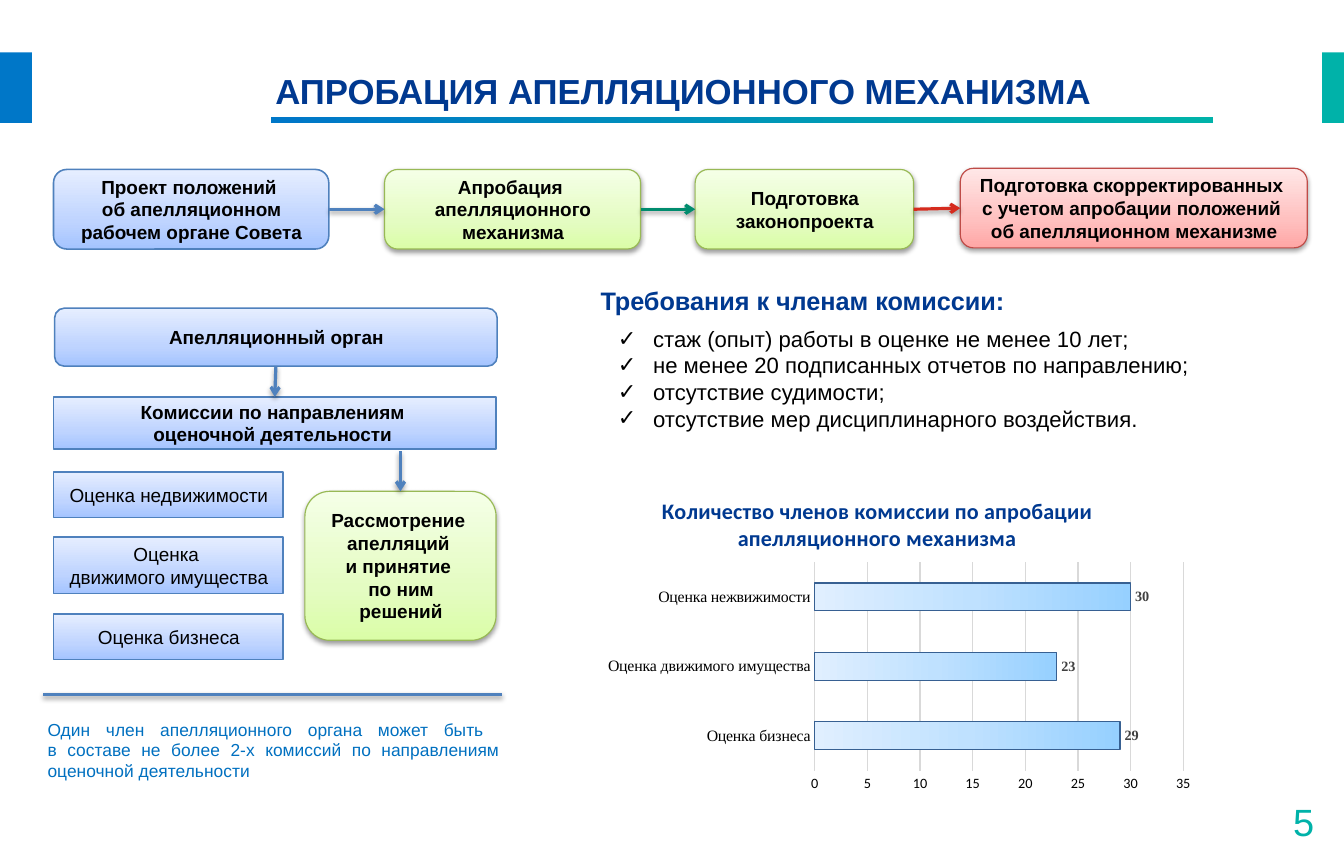
from lxml.etree import SubElement
from pptx import Presentation
from pptx.chart.data import CategoryChartData
from pptx.dml.color import RGBColor
from pptx.enum.chart import XL_CHART_TYPE, XL_LABEL_POSITION, XL_TICK_MARK
from pptx.enum.shapes import MSO_CONNECTOR, MSO_SHAPE
from pptx.enum.text import MSO_ANCHOR, MSO_AUTO_SIZE, PP_ALIGN
from pptx.oxml.ns import qn
from pptx.util import Inches, Pt

BLACK = RGBColor(0x00, 0x00, 0x00)
NAVY = RGBColor(0x00, 0x39, 0x90)
BLUE = RGBColor(0x00, 0x77, 0xC8)
TEAL = RGBColor(0x00, 0xB2, 0xA9)
NOTE_BLUE = RGBColor(0x00, 0x70, 0xC0)
STEEL = RGBColor(0x4F, 0x81, 0xBD)
OLIVE = RGBColor(0x98, 0xB9, 0x55)
BRICK = RGBColor(0xBF, 0x4C, 0x48)
GREEN = RGBColor(0x00, 0x8C, 0x6E)
RED = RGBColor(0xD5, 0x2B, 0x1E)
BAR_EDGE = RGBColor(0x37, 0x60, 0x92)
LABEL_GRAY = RGBColor(0x40, 0x40, 0x40)
GRID_GRAY = RGBColor(0xD9, 0xD9, 0xD9)

STRIP_STOPS = ((0, BLUE), (100, TEAL))
BAR_STOPS = ((0, RGBColor(0x96, 0xD0, 0xFF)), (50, RGBColor(0xBF, 0xE1, 0xFF)), (100, RGBColor(0xE0, 0xEF, 0xFF)))
BLUE_STOPS = ((0, RGBColor(0xA4, 0xC4, 0xFF)), (35, RGBColor(0xBF, 0xD4, 0xFF)), (100, RGBColor(0xE6, 0xEE, 0xFF)))
GREEN_STOPS = ((0, RGBColor(0xDA, 0xFD, 0xA7)), (35, RGBColor(0xE4, 0xFC, 0xC2)), (100, RGBColor(0xF5, 0xFF, 0xE7)))
RED_STOPS = ((0, RGBColor(0xFF, 0xA6, 0xA5)), (35, RGBColor(0xFF, 0xC0, 0xBF)), (100, RGBColor(0xFF, 0xE7, 0xE7)))

BLUE_BOX = (BLUE_STOPS, STEEL, 1, False)
GREEN_BOX = (GREEN_STOPS, OLIVE, 0.75, True)
RED_BOX = (RED_STOPS, BRICK, 0.75, True)


def set_font(font, size, color, bold=False, name="Arial"):
    font.size, font.bold, font.name = Pt(size), bold, name
    font.color.rgb = color


def write(frame, *texts, size=12, color=BLACK, bold=False, name="Arial", align=PP_ALIGN.LEFT, indent=0, bullet=None):
    for index, text in enumerate(texts):
        line = frame.add_paragraph() if index else frame.paragraphs[0]
        line.text = text
        line.alignment = align
        props = line._p.get_or_add_pPr()
        if indent:
            props.set("marL", str(Inches(indent)))
        if bullet:
            line.space_before = Pt(0)
            props.set("indent", str(-Inches(indent)))
            SubElement(props, qn("a:buChar"), char=bullet)
        for part in (line, *line.runs):
            set_font(part.font, size, color, bold, name)
        for line_break in line._p.findall(qn("a:br")):
            SubElement(line_break, qn("a:rPr"), sz=str(size * 100))


def fill_gradient(fill, element, stops, angle):
    fill.gradient()
    fill.gradient_angle = angle
    stop_list = next(element.iter(qn("a:gsLst")))
    stop_list.clear()
    for position, color in stops:
        stop = SubElement(stop_list, qn("a:gs"), pos=str(position * 1000))
        SubElement(stop, qn("a:srgbClr"), val=str(color))


def add_shadow(effects):
    shadow = SubElement(effects, qn("a:outerShdw"), blurRad="40000", dist="20000", dir="5400000", rotWithShape="0")
    SubElement(SubElement(shadow, qn("a:srgbClr"), val="000000"), qn("a:alpha"), val="38000")


def place_in_chart(element, index, **fractions):
    for old in element.findall(qn("c:layout")):
        element.remove(old)
    layout = element.makeelement(qn("c:layout"))
    element.insert(index, layout)
    manual = SubElement(layout, qn("c:manualLayout"))
    if "w" in fractions:
        SubElement(manual, qn("c:layoutTarget"), val="inner")
    for key in "xy":
        SubElement(manual, qn(f"c:{key}Mode"), val="edge")
    for key, value in fractions.items():
        SubElement(manual, qn(f"c:{key}"), val=str(value))


class SlideBuilder:
    def __init__(self, slide):
        self.slide = slide
        self.shapes = slide.shapes

    def placeholder(self, index, area, *texts, margin=None, **style):
        holder = self.slide.placeholders[index]
        holder.left, holder.top, holder.width, holder.height = map(Inches, area)
        frame = holder.text_frame
        frame.auto_size, frame.vertical_anchor = MSO_AUTO_SIZE.NONE, MSO_ANCHOR.TOP
        if margin is not None:
            frame.margin_left = frame.margin_top = frame.margin_right = frame.margin_bottom = margin
        write(frame, *texts, **style)

    def text(self, area, text, **style):
        frame = self.shapes.add_textbox(*map(Inches, area)).text_frame
        frame.word_wrap = True
        write(frame, text, **style)

    def strip(self, area, stops=None, color=BLUE):
        strip = self.shapes.add_shape(MSO_SHAPE.RECTANGLE, *map(Inches, area))
        strip.shadow.inherit = False
        strip.line.fill.background()
        if stops:
            fill_gradient(strip.fill, strip._element.spPr, stops, 0)
        else:
            strip.fill.solid()
            strip.fill.fore_color.rgb = color

    def box(self, area, text, look, rounded=True, bold=True):
        stops, edge, weight, shaded = look
        kind = MSO_SHAPE.ROUNDED_RECTANGLE if rounded else MSO_SHAPE.RECTANGLE
        box = self.shapes.add_shape(kind, *map(Inches, area))
        fill_gradient(box.fill, box._element.spPr, stops, 90)
        box.line.color.rgb, box.line.width = edge, Pt(weight)
        box.shadow.inherit = False
        if shaded:
            add_shadow(box._element.spPr.find(qn("a:effectLst")))
        box.text_frame.word_wrap = True
        box.text_frame.vertical_anchor = MSO_ANCHOR.MIDDLE
        write(box.text_frame, text, bold=bold, align=PP_ALIGN.CENTER, indent=0.01)
        return box

    def line(self, ends=(0, 0, 0, 0), color=STEEL, begin=None, end=None, arrow=True):
        line = self.shapes.add_connector(MSO_CONNECTOR.STRAIGHT, *map(Inches, ends))
        if begin:
            line.begin_connect(*begin)
        if end:
            line.end_connect(*end)
        line.line.color.rgb, line.line.width = color, Pt(2)
        props = line._element.spPr
        if arrow:
            SubElement(props.find(qn("a:ln")), qn("a:tailEnd"), type="arrow")
        add_shadow(SubElement(props, qn("a:effectLst")))

    def bar_chart(self, area, title, categories, values):
        data = CategoryChartData()
        data.categories = categories
        data.add_series("Series 1", values)
        chart = self.shapes.add_chart(XL_CHART_TYPE.BAR_CLUSTERED, *map(Inches, area), data).chart
        set_font(chart.font, 10, BLACK, name="Calibri")
        chart.has_legend = False
        write(chart.chart_title.text_frame, title, size=14, color=NAVY, bold=True, name="Calibri", align=PP_ALIGN.CENTER)
        place_in_chart(chart.chart_title._element, 1, x=0.1, y=0.04)
        place_in_chart(chart._chartSpace.chart.plotArea, 0, x=0.36, y=0.26, w=0.61, h=0.65)

        names, scale = chart.category_axis, chart.value_axis
        for axis, size, font in ((names, 10, "Times New Roman"), (scale, 9, "Calibri")):
            axis.major_tick_mark = axis.minor_tick_mark = XL_TICK_MARK.NONE
            set_font(axis.tick_labels.font, size, BLACK, name=font)
        scale.minimum_scale, scale.maximum_scale, scale.major_unit = 0, 35, 5
        scale.format.line.fill.background()
        for rule in (names.format.line, scale.major_gridlines.format.line):
            rule.color.rgb, rule.width = GRID_GRAY, Pt(0.75)

        plot = chart.plots[0]
        plot.gap_width, plot.vary_by_categories = 150, False
        members = plot.series[0]
        fill_gradient(members.format.fill, members._element, BAR_STOPS, 180)
        members.format.line.color.rgb, members.format.line.width = BAR_EDGE, Pt(0.75)
        labels = members.data_labels
        labels.show_value, labels.position = True, XL_LABEL_POSITION.OUTSIDE_END
        set_font(labels.font, 9, LABEL_GRAY, True, "Times New Roman")


def main():
    deck = Presentation()
    deck.slide_width, deck.slide_height = Inches(189 / 16), Inches(7.5)
    page = SlideBuilder(deck.slides.add_slide(deck.slide_layouts[1]))

    page.strip((0, 0.46, 0.28, 0.62))
    page.strip((11.62, 0.46, 0.2, 0.62), color=TEAL)
    page.strip((2.38, 1.03, 8.28, 0.05), stops=STRIP_STOPS)
    page.placeholder(0, (2.42, 0.61, 9.29, 0.48), "АПРОБАЦИЯ АПЕЛЛЯЦИОННОГО МЕХАНИЗМА",
                     margin=0, size=22, color=NAVY, bold=True)

    steps = [page.box((left, top, width, 0.7), text, look) for left, top, width, text, look in (
        (0.47, 1.49, 2.42, "Проект положений \nоб апелляционном рабочем органе Совета", BLUE_BOX),
        (3.38, 1.49, 2.25, "Апробация \nапелляционного механизма", GREEN_BOX),
        (6.11, 1.49, 1.92, "Подготовка законопроекта", GREEN_BOX),
        (8.44, 1.48, 3.05, "Подготовка скорректированных \nс учетом апробации положений \n"
                           "об апелляционном механизме", RED_BOX),
    )]
    for step, following, color in zip(steps, steps[1:], (STEEL, GREEN, RED)):
        page.line(color=color, begin=(step, 3), end=(following, 1))

    appeal_body = page.box((0.48, 2.71, 3.89, 0.51), "Апелляционный орган", BLUE_BOX)
    commissions = page.box((0.47, 3.49, 3.89, 0.46), "Комиссии по направлениям \nоценочной деятельности ",
                           BLUE_BOX, rounded=False)
    for top, height, area_name in ((4.15, 0.4, "Оценка недвижимости"),
                                   (4.72, 0.5, "Оценка \nдвижимого имущества"),
                                   (5.4, 0.4, "Оценка бизнеса")):
        page.box((0.47, top, 2.02, height), area_name, BLUE_BOX, rounded=False, bold=False)
    review = page.box((2.68, 4.32, 1.68, 1.31), "Рассмотрение \nапелляций \nи принятие \nпо ним решений", GREEN_BOX)
    page.line(begin=(appeal_body, 2), end=(commissions, 0))
    page.line((3.52, 3.97, 3.52, 4.32), end=(review, 0))

    page.line((0.38, 6.11, 4.41, 6.11), arrow=False)
    page.text((0.31, 6.27, 4.18, 0.66),
              "Один член апелляционного органа может быть \n"
              "в составе не более 2-х комиссий по направлениям оценочной деятельности",
              size=11, color=NOTE_BLUE, align=PP_ALIGN.JUSTIFY, indent=0.01)

    page.text((5.18, 2.46, 6.8, 0.37), "Требования к членам комиссии:",
              size=16, color=NAVY, bold=True, align=PP_ALIGN.JUSTIFY)
    page.placeholder(1, (5.33, 2.81, 6.16, 1.31),
                     "стаж (опыт) работы в оценке не менее 10 лет;",
                     "не менее 20 подписанных отчетов по направлению;",
                     "отсутствие судимости;",
                     "отсутствие мер дисциплинарного воздействия.",
                     size=14, indent=0.31, bullet="✓")
    page.bar_chart((5.25, 4.21, 5.31, 2.82), "Количество членов комиссии по апробации апелляционного механизма",
                   ("Оценка бизнеса", "Оценка движимого имущества", "Оценка нежвижимости"), (29, 23, 30))
    page.text((10.67, 6.97, 0.98, 0.4), "5", size=24, color=TEAL, align=PP_ALIGN.RIGHT)

    deck.save("out.pptx")


if __name__ == "__main__":
    main()
